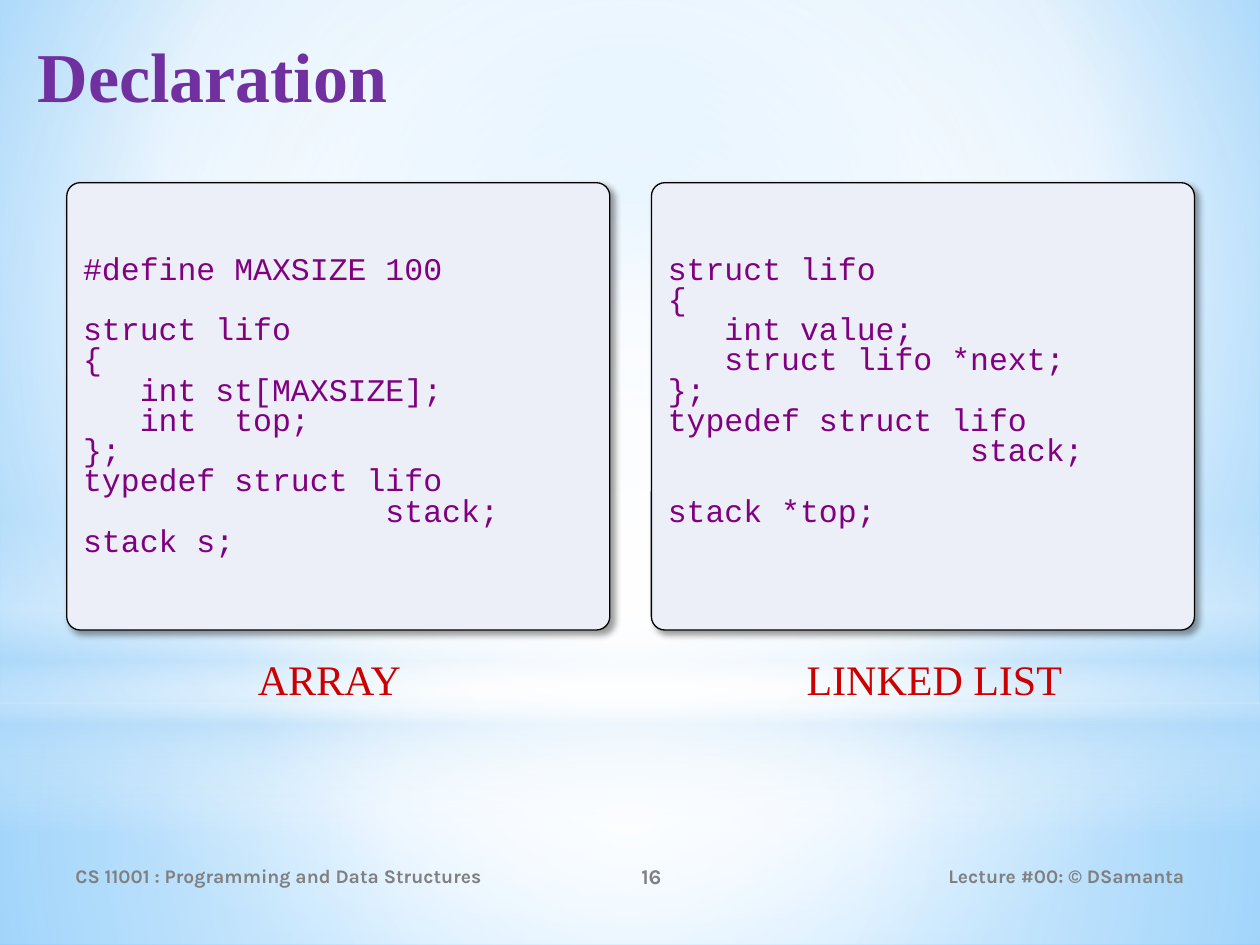
from lxml import etree
from pptx import Presentation
from pptx.dml.color import RGBColor
from pptx.enum.shapes import MSO_SHAPE
from pptx.enum.text import MSO_ANCHOR, MSO_AUTO_SIZE, PP_ALIGN
from pptx.oxml.ns import qn
from pptx.util import Inches, Pt

RECT, OVAL, ROUNDED = MSO_SHAPE.RECTANGLE, MSO_SHAPE.OVAL, MSO_SHAPE.ROUNDED_RECTANGLE
TOP, MIDDLE = MSO_ANCHOR.TOP, MSO_ANCHOR.MIDDLE
LEFT, CENTER, RIGHT = PP_ALIGN.LEFT, PP_ALIGN.CENTER, PP_ALIGN.RIGHT

BLACK = RGBColor(0x00, 0x00, 0x00)
PANEL = RGBColor(0xEC, 0xEF, 0xF8)
VIOLET = RGBColor(0x70, 0x30, 0xA0)
PURPLE = RGBColor(0x80, 0x00, 0x80)
RED = RGBColor(0xCC, 0x00, 0x00)
GRAY = RGBColor(0x80, 0x80, 0x80)
WHITE = RGBColor(0xFF, 0xFF, 0xFF)
PALE_BLUE = RGBColor(0xB4, 0xDC, 0xFA)
SKY_BLUE = RGBColor(0x9E, 0xD5, 0xFF)
DEEP_BLUE = RGBColor(0x5B, 0xB9, 0xFF)

TITLE = {"name": "Times New Roman", "size": Pt(40), "bold": True}
CODE = {"name": "Courier New", "size": Pt(18)}
CAPTION = {"name": "Times New Roman", "size": Pt(24)}
FOOTER = {"name": "Karla", "size": Pt(11), "bold": True}
PAGE_NUMBER = {**FOOTER, "size": Pt(12)}
CODE_SPACING = 0.8
BLANK_LINE = Pt(17.3)
CENTERED = (50, 50, 50, 50)

ARRAY_CODE = """#define MAXSIZE 100

struct lifo
{
   int st[MAXSIZE];
   int  top;
};
typedef struct lifo
                stack;
stack s;"""

LIST_CODE = """struct lifo
{
   int value;
   struct lifo *next;
};
typedef struct lifo
                stack;

stack *top;"""


def add_node(parent, tag, **attributes):
    node = etree.SubElement(parent, qn(tag))
    for name, value in attributes.items():
        node.set(name, str(value))
    return node


class SlideBuilder:
    def __init__(self, page):
        self.page = page

    def gradient(self, fill, owner, stops, focus=None):
        """Stops are (position, colour, opacity) in percent; no focus means top to bottom."""
        fill.gradient()
        gradient = next(owner.iter(qn("a:gradFill")))
        for child in list(gradient):
            gradient.remove(child)
        stop_list = add_node(gradient, "a:gsLst")
        for position, color, opacity in stops:
            stop = add_node(stop_list, "a:gs", pos=position * 1000)
            tint = add_node(stop, "a:srgbClr", val=color)
            add_node(tint, "a:alpha", val=opacity * 1000)
        if focus:
            circle = add_node(gradient, "a:path", path="circle")
            sides = {side: inset * 1000 for side, inset in zip("ltrb", focus)}
            add_node(circle, "a:fillToRect", **sides)
        else:
            add_node(gradient, "a:lin", ang=90 * 60000, scaled=0)

    def background(self, stops, focus):
        self.gradient(self.page.background.fill, self.page._element, stops, focus)

    def shape(self, kind, left, top, width, height):
        shape = self.page.shapes.add_shape(
            kind, Inches(left), Inches(top), Inches(width), Inches(height))
        shape.shadow.inherit = False
        return shape

    def glow(self, kind, top, height, stops, focus=None):
        shape = self.shape(kind, 0, top, 10, height)
        shape.line.fill.background()
        self.gradient(shape.fill, shape._element, stops, focus)

    def style(self, para, values, color, align=LEFT):
        para.alignment = align
        for name, value in values.items():
            setattr(para.font, name, value)
        para.font.color.rgb = color

    def title(self, text):
        title = self.page.shapes.title
        self.page.shapes._spTree.append(title._element)  # in front of the glows
        title.left, title.top = Inches(0.2), Inches(0.21)
        title.width, title.height = Inches(9.53), Inches(1.25)
        frame = title.text_frame
        frame.text = text
        frame.vertical_anchor = TOP
        frame.auto_size = MSO_AUTO_SIZE.NONE
        self.style(frame.paragraphs[0], TITLE, VIOLET)

    def label(self, text, place, values, color, align, anchor=TOP):
        box = self.page.shapes.add_textbox(*(Inches(length) for length in place))
        frame = box.text_frame
        frame.word_wrap = True
        frame.vertical_anchor = anchor
        frame.text = text
        self.style(frame.paragraphs[0], values, color, align)

    def drop_shadow(self, shape):
        effects = shape._element.spPr.find(qn("a:effectLst"))
        shadow = add_node(effects, "a:outerShdw", blurRad=Pt(4), dist=Pt(3),
                          dir=45 * 60000, algn="tl", rotWithShape=0)
        add_node(add_node(shadow, "a:srgbClr", val=BLACK), "a:alpha", val=40000)

    def code_panel(self, left, code):
        panel = self.shape(ROUNDED, left, 1.45, 4.31, 3.55)
        panel.adjustments[0] = 0.03
        panel.fill.solid()
        panel.fill.fore_color.rgb = PANEL
        panel.line.color.rgb = BLACK
        panel.line.width = Pt(0.75)
        self.drop_shadow(panel)
        frame = panel.text_frame
        frame.word_wrap = True
        frame.vertical_anchor = TOP
        frame.margin_top = Inches(0.55)
        para, gap = frame.paragraphs[0], 0
        for number, line in enumerate(code.splitlines()):
            if not line:
                gap = BLANK_LINE
                continue
            if number:
                para = frame.add_paragraph()
            para.text = line
            para.line_spacing = CODE_SPACING
            para.space_before = gap
            self.style(para, CODE, PURPLE)
            gap = 0


def main():
    deck = Presentation()
    deck.slide_width, deck.slide_height = Inches(10), Inches(7.5)
    slide = SlideBuilder(deck.slides.add_slide(deck.slide_layouts[5]))

    # Sky background with soft glows
    slide.background([(0, SKY_BLUE, 100), (60, WHITE, 100), (100, DEEP_BLUE, 100)],
                     (20, 10, 20, 60))
    slide.glow(RECT, 5.58, 1.92,
               [(0, WHITE, 91), (37, WHITE, 76), (100, PALE_BLUE, 79)], CENTERED)
    slide.glow(RECT, 0, 5.58,
               [(0, WHITE, 89), (48, WHITE, 62), (100, PALE_BLUE, 79)], CENTERED)
    slide.glow(RECT, 4.12, 2.5,
               [(0, WHITE, 0), (29, WHITE, 30), (45, PALE_BLUE, 40),
                (55, WHITE, 26), (65, PALE_BLUE, 60), (100, WHITE, 0)])
    slide.glow(OVAL, 1.75, 5.58, [(0, WHITE, 100), (56, WHITE, 0)], CENTERED)

    slide.title("Declaration")

    # Footer
    for text, left, width, values, align in (
            ("CS 11001 : Programming and Data Structures", 0.5, 3.67, FOOTER, LEFT),
            ("16", 4.17, 2, PAGE_NUMBER, CENTER),
            ("Lecture #00: © DSamanta", 6.75, 2.75, FOOTER, RIGHT)):
        slide.label(text, (left, 6.75, width, 0.4), values, GRAY, align, MIDDLE)

    # Code panels with captions
    for panel_left, code, caption, left, width in (
            (0.53, ARRAY_CODE, "ARRAY", 1.7, 1.83),
            (5.17, LIST_CODE, "LINKED LIST", 5.83, 3.17)):
        slide.code_panel(panel_left, code)
        slide.label(caption, (left, 5.14, width, 0.5), CAPTION, RED, CENTER)

    deck.save("out.pptx")


if __name__ == "__main__":
    main()
